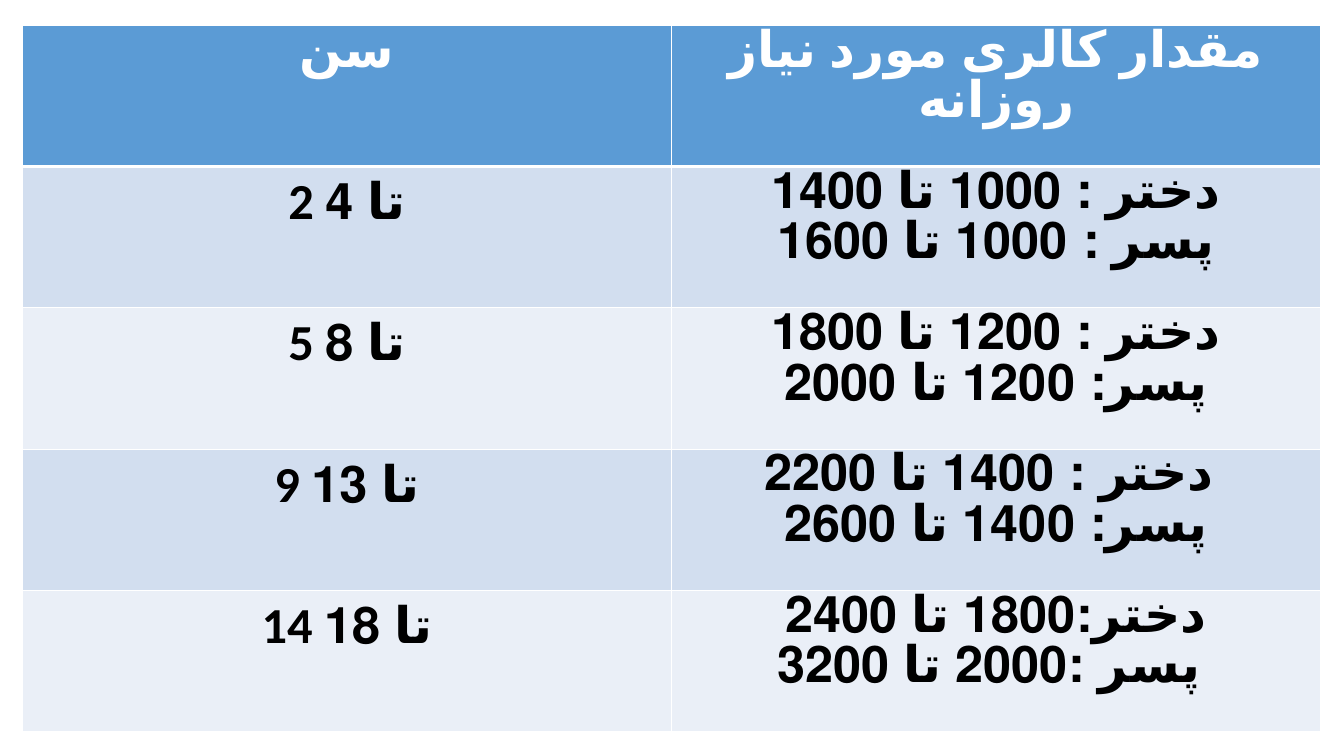
from lxml import etree
from pptx import Presentation
from pptx import util as u
from pptx.dml import color
from pptx.enum import text
from pptx.oxml import ns


def paint(target, value):
    target.rgb = color.RGBColor.from_string(value)


rows = [
    ("سن", "مقدار کالری مورد نیاز روزانه"),
    ("2 تا 4", "دختر : 1000 تا 1400\nپسر : 1000 تا 1600"),
    ("5 تا 8", "دختر : 1200 تا 1800\nپسر: 1200 تا 2000"),
    ("9 تا 13", "دختر : 1400 تا 2200 \nپسر: 1400 تا 2600"),
    ("14 تا 18", "دختر:1800 تا 2400\nپسر :2000 تا 3200 "),
]

presentation = Presentation()
presentation.slide_width = u.Inches(13.33)
presentation.slide_height = u.Inches(7.5)
slide = presentation.slides.add_slide(presentation.slide_layouts[6])

table = slide.shapes.add_table(
    len(rows), 2, u.Inches(0.22), u.Inches(0.25), u.Inches(12.88), u.Inches(7.01)
).table

for row_index, row in enumerate(rows):
    is_header = row_index == 0
    band = "D2DEEF" if row_index % 2 else "EAEFF7"
    for column_index, content in enumerate(row):
        cell = table.cell(row_index, column_index)
        cell.text = content
        cell.fill.solid()
        paint(cell.fill.fore_color, "5B9BD5" if is_header else band)
        if is_header:
            border = etree.Element(ns.qn("a:lnB"), w=str(u.Pt(3)))
            border_fill = etree.SubElement(border, ns.qn("a:solidFill"))
            etree.SubElement(border_fill, ns.qn("a:srgbClr"), val="FFFFFF")
            cell._tc.get_or_add_tcPr().insert(0, border)
        is_arabic_only = is_header or column_index == 1
        for paragraph in cell.text_frame.paragraphs:
            paragraph.alignment = text.PP_ALIGN.CENTER
            if is_arabic_only:
                paragraph.line_spacing = u.Pt(36)
            for run in paragraph.runs:
                run.font.name = "Calibri"
                run.font.size = u.Pt(36)
                run.font.bold = True
                paint(run.font.color, "FFFFFF" if is_header else "000000")
                properties = run._r.get_or_add_rPr()
                properties.set("lang", "fa-IR")
                if is_arabic_only:
                    etree.SubElement(properties, ns.qn("a:cs"), typeface="Helvetica")

presentation.save("out.pptx")
